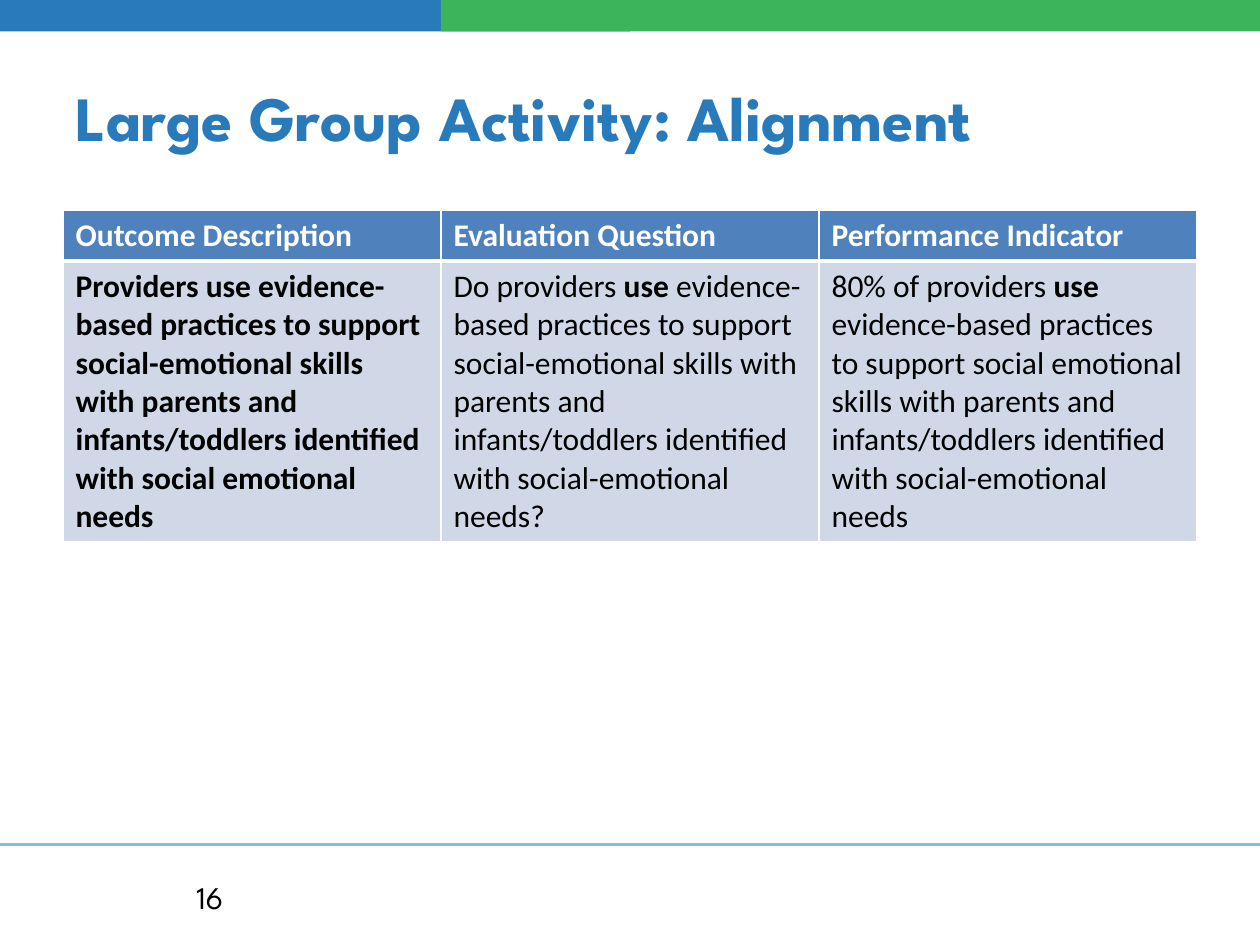
from dataclasses import dataclass

from lxml.etree import SubElement
from pptx import Presentation
from pptx.dml.color import RGBColor
from pptx.enum.shapes import MSO_CONNECTOR, MSO_SHAPE
from pptx.enum.text import MSO_ANCHOR, PP_ALIGN
from pptx.oxml import parse_xml
from pptx.oxml.ns import nsdecls, qn
from pptx.slide import Slide
from pptx.table import _Cell
from pptx.text.text import TextFrame
from pptx.util import Inches, Pt

BLUE = "297ABB"
GREEN = "3CB45C"
RULE_BLUE = "7FBCE7"
HEADER_BLUE = "4F81BD"
BODY_BLUE = "D0D8E8"
WHITE = "FFFFFF"
BLACK = "000000"
HEADING_FONT = "League Spartan"
TABLE_FONT = "Calibri"


@dataclass(frozen=True)
class Run:
    text: str
    bold: bool = False


@dataclass(frozen=True)
class Column:
    heading: str
    body: tuple[Run, ...]


@dataclass(frozen=True)
class Band:
    left: float
    width: float
    color: str


BANDS = (Band(0, 5, BLUE), Band(3.5, 6.5, GREEN))

COLUMNS = (
    Column("Outcome Description", (
        Run("Providers use evidence-based practices to support social-emotional skills "
            "with parents and infants/toddlers identified with social emotional needs", True),
    )),
    Column("Evaluation Question", (
        Run("Do providers "),
        Run("use", True),
        Run(" evidence-based practices to support social-emotional skills with parents "
            "and infants/toddlers identified with social-emotional needs?"),
    )),
    Column("Performance Indicator", (
        Run("80% of providers "),
        Run("use ", True),
        Run("evidence-based practices to support social emotional skills with parents "
            "and infants/toddlers identified with social-emotional needs"),
    )),
)


def rgb(color: str) -> RGBColor:
    return RGBColor.from_string(color)


def write(frame: TextFrame, runs: tuple[Run, ...], *, font: str, color: str,
          size: float = 18, align: PP_ALIGN = PP_ALIGN.LEFT) -> None:
    frame.word_wrap = True
    paragraph = frame.paragraphs[0]
    paragraph.alignment = align
    for part in runs:
        run = paragraph.add_run()
        run.text = part.text
        run.font.name = font
        run.font.size = Pt(size)
        run.font.bold = part.bold
        run.font.color.rgb = rgb(color)


def add_label(slide: Slide, left: float, top: float, width: float, height: float,
              run: Run, **text_format) -> None:
    frame = slide.shapes.add_textbox(
        Inches(left), Inches(top), Inches(width), Inches(height)).text_frame
    frame.vertical_anchor = MSO_ANCHOR.MIDDLE
    write(frame, (run,), font=HEADING_FONT, **text_format)


def add_band(slide: Slide, band: Band) -> None:
    """Draw a band that bleeds over the top edge of the slide."""
    bar = slide.shapes.add_shape(
        MSO_SHAPE.RECTANGLE, Inches(band.left), Inches(-1.25),
        Inches(band.width), Inches(1.5))
    bar.shadow.inherit = False
    bar.fill.solid()
    bar.fill.fore_color.rgb = rgb(band.color)
    bar.line.fill.background()


def add_footer_rule(slide: Slide) -> None:
    height = Inches(6.7)
    rule = slide.shapes.add_connector(
        MSO_CONNECTOR.STRAIGHT, 0, height, Inches(10), height)
    rule.line.color.rgb = rgb(RULE_BLUE)
    rule.line.width = Pt(1.5)
    SubElement(rule._element.spPr, qn("a:effectLst"))


def style_cell(cell: _Cell, fill: str, bottom: float) -> None:
    """Fill the cell and give it white borders; bottom is a width in points."""
    cell.fill.solid()
    cell.fill.fore_color.rgb = rgb(fill)
    properties = cell._tc.get_or_add_tcPr()
    widths = {"L": 1, "R": 1, "T": 1, "B": bottom}
    for index, (side, width) in enumerate(widths.items()):
        properties.insert(index, parse_xml(
            f'<a:ln{side} {nsdecls("a")} w="{Pt(width)}"><a:solidFill>'
            f'<a:srgbClr val="{WHITE}"/></a:solidFill></a:ln{side}>'))


def add_alignment_table(slide: Slide) -> None:
    heights = (0.4, 2.23)
    table = slide.shapes.add_table(
        len(heights), len(COLUMNS), Inches(0.5), Inches(1.67),
        Inches(9), Inches(sum(heights))).table
    for row, height in zip(table.rows, heights):
        row.height = Inches(height)
    for index, column in enumerate(COLUMNS):
        heading, body = table.cell(0, index), table.cell(1, index)
        write(heading.text_frame, (Run(column.heading, True),), font=TABLE_FONT, color=WHITE)
        write(body.text_frame, column.body, font=TABLE_FONT, color=BLACK)
        style_cell(heading, HEADER_BLUE, bottom=3)
        style_cell(body, BODY_BLUE, bottom=1)


def main() -> None:
    deck = Presentation()
    deck.slide_width, deck.slide_height = Inches(10), Inches(7.5)
    slide = deck.slides.add_slide(deck.slide_layouts[6])
    add_footer_rule(slide)
    for band in BANDS:
        add_band(slide, band)
    add_label(slide, 0.5, 6.92, 2.33, 0.4, Run("16"), color=BLACK, align=PP_ALIGN.CENTER)
    add_label(slide, 0.5, 0.3, 9, 1.25, Run("Large Group Activity: Alignment", True),
              color=BLUE, size=36)
    add_alignment_table(slide)
    deck.save("out.pptx")


if __name__ == "__main__":
    main()
